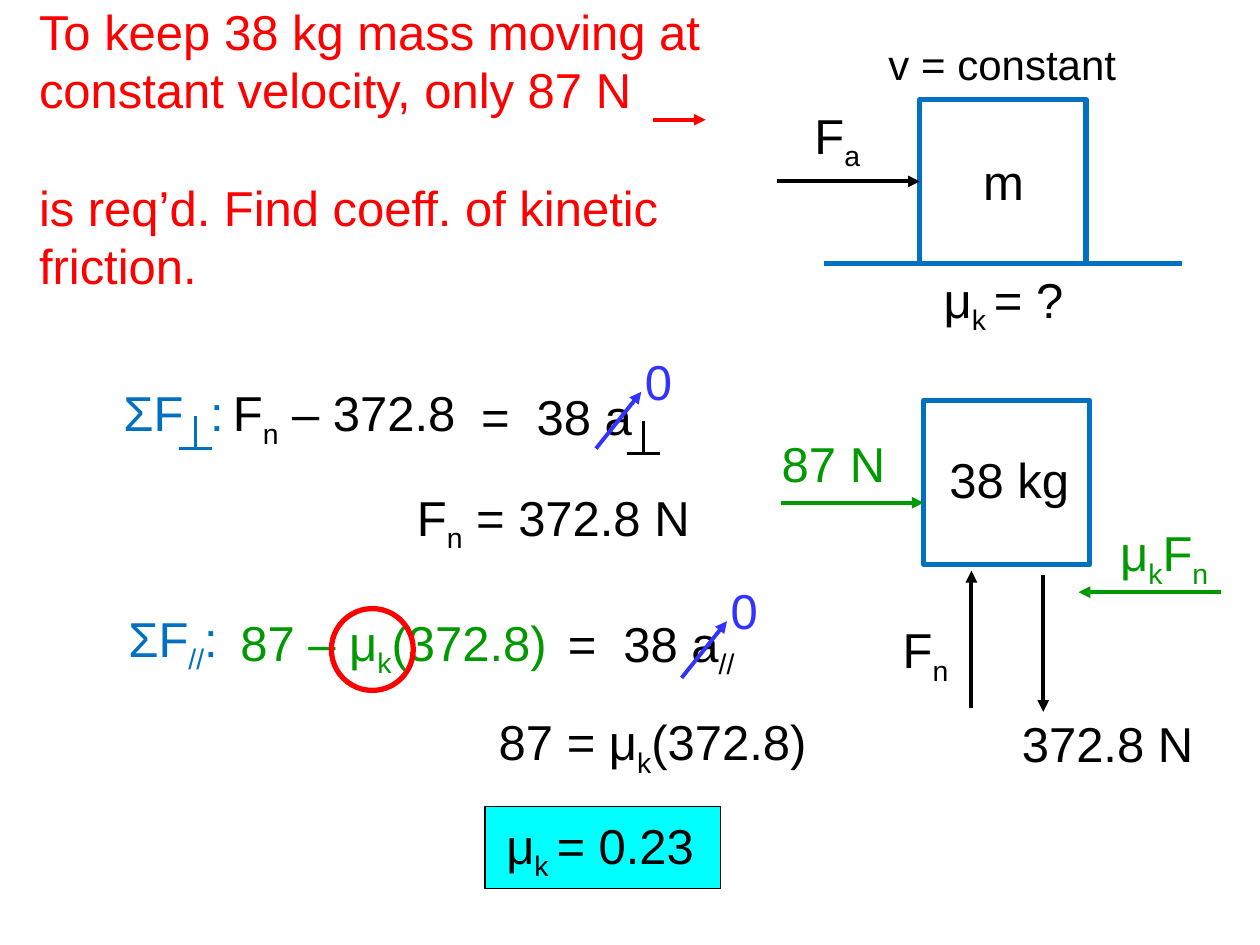
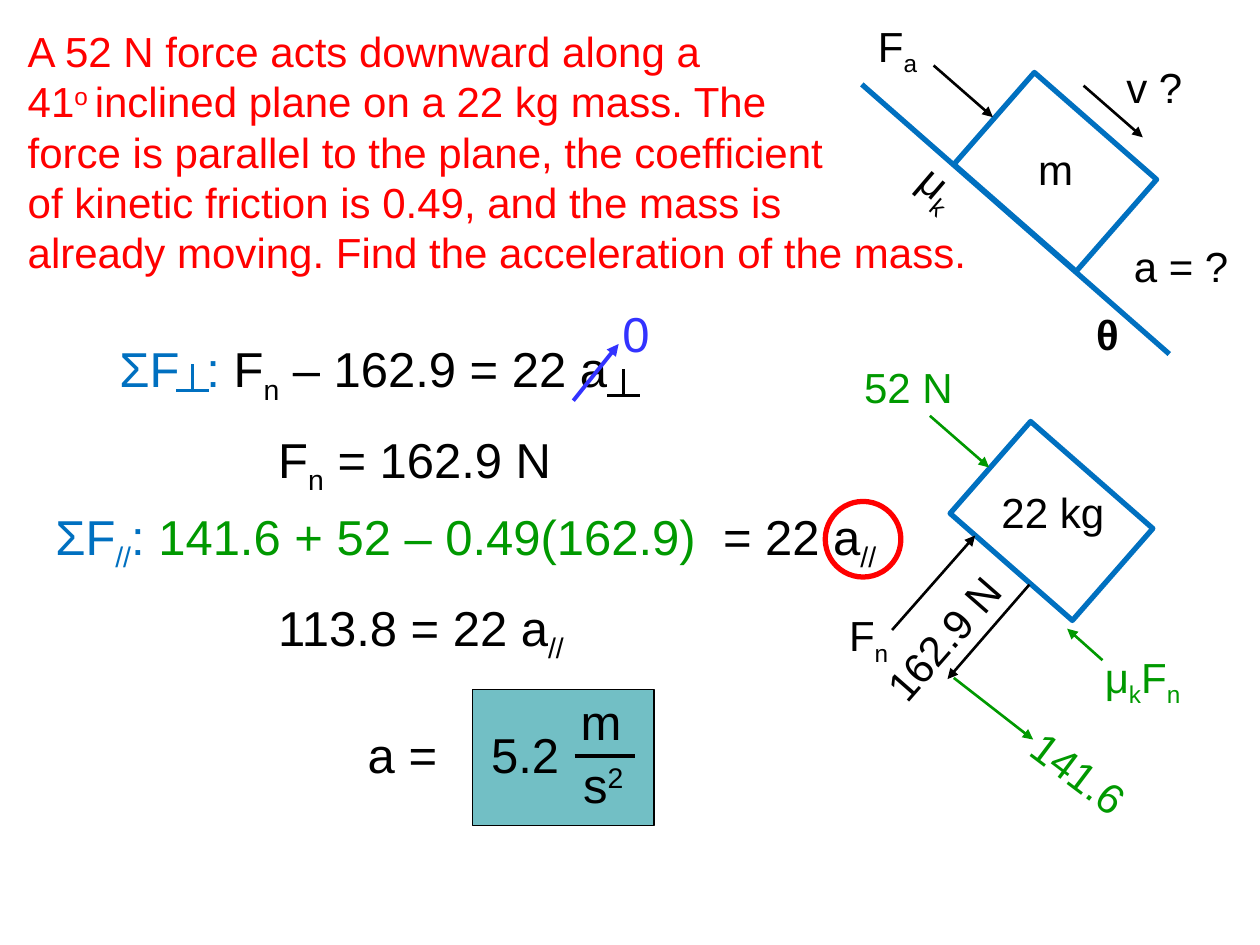
from lxml import etree
from pptx import Presentation
from pptx import util as u
from pptx.dml import color as dml
from pptx.enum import shapes, text
from pptx.oxml import ns

BLACK, BLUE, GREEN, RED, VIOLET = "000000", "0070C0", "009900", "FF0000", "3333FF"
CYAN, TEAL = "00FFFF", "72BFC5"
FONT = "Arial"
BOX_HEIGHT = {28: 0.57, 24: 0.5}
LINE_PITCH = {28: 33.5, 24: 28.8}
CENTER = text.PP_ALIGN.CENTER
LEFT = text.PP_ALIGN.LEFT


def rgb(value):
    return dml.RGBColor.from_string(value)


def apply(target, values):
    for name, value in values.items():
        setattr(target, name, value)


def write(para, markup, size, color, shift=-25):
    for index, piece in enumerate(markup.split("|")):
        if piece:
            span = para.add_run()
            span.text = piece
            apply(span.font, {"name": FONT, "size": u.Pt(size), "bold": False})
            span.font.color.rgb = rgb(color)
            if index % 2:
                span._r.get_or_add_rPr().set("baseline", str(shift * 1000))


def add_tab_stop(para, position):
    stops = etree.SubElement(para._p.get_or_add_pPr(), ns.qn("a:tabLst"))
    etree.SubElement(stops, ns.qn("a:tab"), pos=str(u.Inches(position)), algn="l")


def add_label(page, at, spans, size=28, align=LEFT, turn=0, tab=None, shift=-25):
    left, top, width = at
    box = page.shapes.add_textbox(u.Inches(left), u.Inches(top),
                                  u.Inches(width), u.Inches(BOX_HEIGHT[size]))
    box.rotation = turn
    apply(box.text_frame, {"word_wrap": False,
                           "auto_size": text.MSO_AUTO_SIZE.SHAPE_TO_FIT_TEXT})
    para = box.text_frame.paragraphs[0]
    para.alignment = align
    if tab:
        add_tab_stop(para, tab)
    for markup, color in spans:
        write(para, markup, size, color, shift)
    return box


def add_problem(page, at, lines, size, gap=0):
    title = page.shapes.title
    apply(title, dict(zip(("left", "top", "width", "height"), map(u.Inches, at))))
    frame = title.text_frame
    apply(frame, {"word_wrap": True, "auto_size": text.MSO_AUTO_SIZE.NONE,
                  "vertical_anchor": text.MSO_ANCHOR.MIDDLE})
    for index, line in enumerate(lines):
        para = frame.add_paragraph() if index else frame.paragraphs[0]
        apply(para, {"alignment": LEFT, "line_spacing": u.Pt(LINE_PITCH[size]),
                     "space_before": u.Pt(gap if index else 0)})
        write(para, line, size, RED, shift=30)


def add_outline(page, kind, at, color, weight=3, fill=None, turn=0):
    shape = page.shapes.add_shape(kind, *map(u.Inches, at))
    shape.shadow.inherit = False
    shape.rotation = turn
    if fill:
        shape.fill.solid()
        shape.fill.fore_color.rgb = rgb(fill)
    else:
        shape.fill.background()
    shape.line.color.rgb = rgb(color)
    shape.line.width = u.Pt(weight)
    return shape


def add_block(page, at, turn=0):
    return add_outline(page, shapes.MSO_SHAPE.RECTANGLE, at, BLUE, turn=turn)


def add_answer(page, at, fill):
    add_outline(page, shapes.MSO_SHAPE.RECTANGLE, at, BLACK, 0.75, fill)


def add_ring(page, left, top, size):
    add_outline(page, shapes.MSO_SHAPE.OVAL, (left, top, size, size), RED)


def add_line(page, ends, color, weight):
    line = page.shapes.add_connector(shapes.MSO_CONNECTOR.STRAIGHT, *map(u.Inches, ends))
    line.line.color.rgb = rgb(color)
    line.line.width = u.Pt(weight)
    etree.SubElement(line._element.spPr, ns.qn("a:effectLst"))
    return line


def add_arrow(page, ends, color, weight=2.25):
    arrow = add_line(page, ends, color, weight)
    etree.SubElement(arrow.line._get_or_add_ln(), ns.qn("a:tailEnd"), type="triangle")
    return arrow


def add_perpendicular(page, center, base, height, color):
    add_line(page, (center - 0.13, base, center + 0.13, base), color, 1.75)
    add_line(page, (center, base - height, center, base), color, 1.75)


def add_zero(page, left, top):
    add_arrow(page, (left - 0.29, top + 0.82, left + 0.07, top + 0.37), VIOLET)
    add_label(page, (left, top, 0.42), [("0", VIOLET)])


def build_level_slide(page):
    add_problem(page, (0.21, 0.19, 5.72, 1.97),
                ["To keep 38 kg mass moving at constant velocity, only 87 N",
                 "is req’d. Find coeff. of kinetic friction."], 28, LINE_PITCH[28])
    add_arrow(page, (5.18, 0.95, 5.6, 0.95), RED)
    add_answer(page, (3.85, 6.4, 1.87, 0.65), CYAN)

    mass = add_block(page, (7.3, 0.79, 1.32, 1.3))
    add_block(page, (7.33, 3.18, 1.32, 1.3))
    add_line(page, (6.54, 2.09, 9.38, 2.09), BLUE, 3)
    push = add_arrow(page, (6.17, 1.44, 7.3, 1.44), BLACK)
    push.end_connect(mass, 1)
    for ends, color in [((6.2, 3.99, 7.33, 3.99), GREEN),
                        ((9.69, 4.7, 8.56, 4.7), GREEN),
                        ((7.71, 5.62, 7.71, 4.53), BLACK),
                        ((8.28, 4.56, 8.28, 5.65), BLACK)]:
        add_arrow(page, ends, color)
    add_label(page, (6.94, 0.26, 2.03), [("v = constant", BLACK)], 24, CENTER)
    for at, markup, color in [((7.7, 1.15, 0.53), "m", BLACK),
                              ((6.35, 0.79, 0.59), "F|a|", BLACK),
                              ((7.35, 2.09, 1.23), "μ|k |= ?", BLACK),
                              ((6.1, 3.39, 1.03), "87 N", GREEN),
                              ((7.43, 3.52, 1.16), "38 kg", BLACK),
                              ((8.77, 4.1, 0.94), "μ|k|F|n|", GREEN),
                              ((7.05, 4.87, 0.59), "F|n|", BLACK),
                              ((8, 5.61, 1.58), "372.8 N", BLACK)]:
        add_label(page, at, [(markup, color)], align=CENTER)

    for at, markup, color, tab in [
            ((0.88, 2.99, 1.25), "ΣF\t:", BLUE, 0.69),
            ((1.75, 2.99, 2.01), "F|n| – 372.8", BLACK, None),
            ((3.72, 3.02, 1.42), "=\t38 a", BLACK, 0.44),
            ((3.21, 3.82, 2.41), "F|n| = 372.8 N", BLACK, None),
            ((0.92, 4.78, 1.25), "ΣF|//|:", BLUE, None),
            ((1.81, 4.81, 2.68), "87 – μ|k|(372.8)", GREEN, None),
            ((4.41, 4.82, 1.56), "=\t38 a|//|", BLACK, 0.44),
            ((3.86, 5.6, 2.69), "87 = μ|k|(372.8)", BLACK, None),
            ((3.92, 6.42, 1.77), "μ|k |= 0.23", BLACK, None)]:
        add_label(page, at, [(markup, color)], tab=tab)
    add_perpendicular(page, 1.55, 3.56, 0.26, BLUE)
    add_perpendicular(page, 5.11, 3.6, 0.26, BLACK)
    add_zero(page, 5.02, 2.74)
    add_zero(page, 5.7, 4.56)
    add_ring(page, 2.63, 4.83, 0.65)


def build_incline_slide(page):
    add_problem(page, (0.12, 0.14, 7.78, 2.12),
                ["A 52 N force acts downward along a",
                 "41|o |inclined plane on a 22 kg mass. The",
                 "force is parallel to the plane, the coefficient",
                 "of kinetic friction is 0.49, and the mass is",
                 "already moving. Find the acceleration of the mass."], 24)

    add_block(page, (7.73, 0.88, 1.29, 0.97), 41.2)
    add_block(page, (7.7, 3.65, 1.29, 0.97), 41.2)
    add_line(page, (6.84, 0.67, 9.28, 2.81), BLUE, 3)
    for ends, color in [((7.41, 0.52, 7.88, 0.93), BLACK),
                        ((8.6, 0.68, 9.07, 1.09), BLACK),
                        ((7.38, 3.3, 7.85, 3.71), GREEN),
                        ((8.17, 4.64, 7.52, 5.39), BLACK),
                        ((7.08, 5, 7.74, 4.25), BLACK),
                        ((8.75, 5.24, 8.47, 4.99), GREEN),
                        ((7.57, 5.38, 8.2, 5.87), GREEN)]:
        add_arrow(page, ends, color, 1.5)
    for at, markup, color, turn in [((6.87, 0.11, 0.53), "F|a|", BLACK, 0),
                                    ((8.84, 0.44, 0.65), "v ?", BLACK, 0),
                                    ((8.14, 1.09, 0.48), "m", BLACK, 0),
                                    ((7.22, 1.23, 0.51), "μ|k|", BLACK, 40.6),
                                    ((8.9, 1.86, 0.96), "a = ?", BLACK, 0),
                                    ((6.76, 2.82, 0.91), "52 N", GREEN, 0),
                                    ((7.85, 3.81, 1.03), "22 kg", BLACK, 0),
                                    ((6.64, 4.79, 0.53), "F|n|", BLACK, 0),
                                    ((6.8, 4.81, 1.38), "162.9 N", BLACK, 311.2),
                                    ((8.67, 5.12, 0.84), "μ|k|F|n|", GREEN, 0),
                                    ((8.05, 5.89, 1.05), "141.6", GREEN, 37)]:
        add_label(page, at, [(markup, color)], 24, turn=turn)
    angle = add_label(page, (8.6, 2.4, 0.38), [("θ", BLACK)], 24)
    angle.text_frame.paragraphs[0].runs[0].font.bold = True

    add_label(page, (0.85, 2.64, 4.24),
              [("ΣF\t: ", BLUE), ("F|n| – 162.9 = 22 a", BLACK)], tab=0.69)
    add_perpendicular(page, 1.53, 3.1, 0.21, BLUE)
    add_perpendicular(page, 4.95, 3.14, 0.21, BLACK)
    add_zero(page, 4.84, 2.36)
    add_label(page, (2.11, 3.36, 2.41), [("F|n| = 162.9 N", BLACK)])
    add_label(page, (0.34, 3.97, 6.82),
              [("ΣF|//|: ", BLUE), ("141.6 + 52 – 0.49(162.9)\t", GREEN),
               ("= 22 a|//|", BLACK)], tab=5.3)
    add_ring(page, 6.55, 3.98, 0.6)
    add_label(page, (2.11, 4.69, 2.59), [("113.8 = 22 a|//|", BLACK)])
    add_answer(page, (3.75, 5.47, 1.44, 1.08), TEAL)
    add_label(page, (2.82, 5.7, 1.85), [("a =\t5.2", BLACK)], tab=0.98)
    add_label(page, (4.51, 5.44, 0.53), [("m", BLACK)])
    add_label(page, (4.53, 5.94, 0.54), [("s|2|", BLACK)], shift=30)
    add_line(page, (4.56, 6, 5.04, 6), BLACK, 2.25)


def main():
    deck = Presentation()
    apply(deck, {"slide_width": u.Inches(10), "slide_height": u.Inches(7.5)})
    for build in (build_level_slide, build_incline_slide):
        page = deck.slides.add_slide(deck.slide_layouts[5])
        build(page)
    deck.save("out.pptx")


if __name__ == "__main__":
    main()
